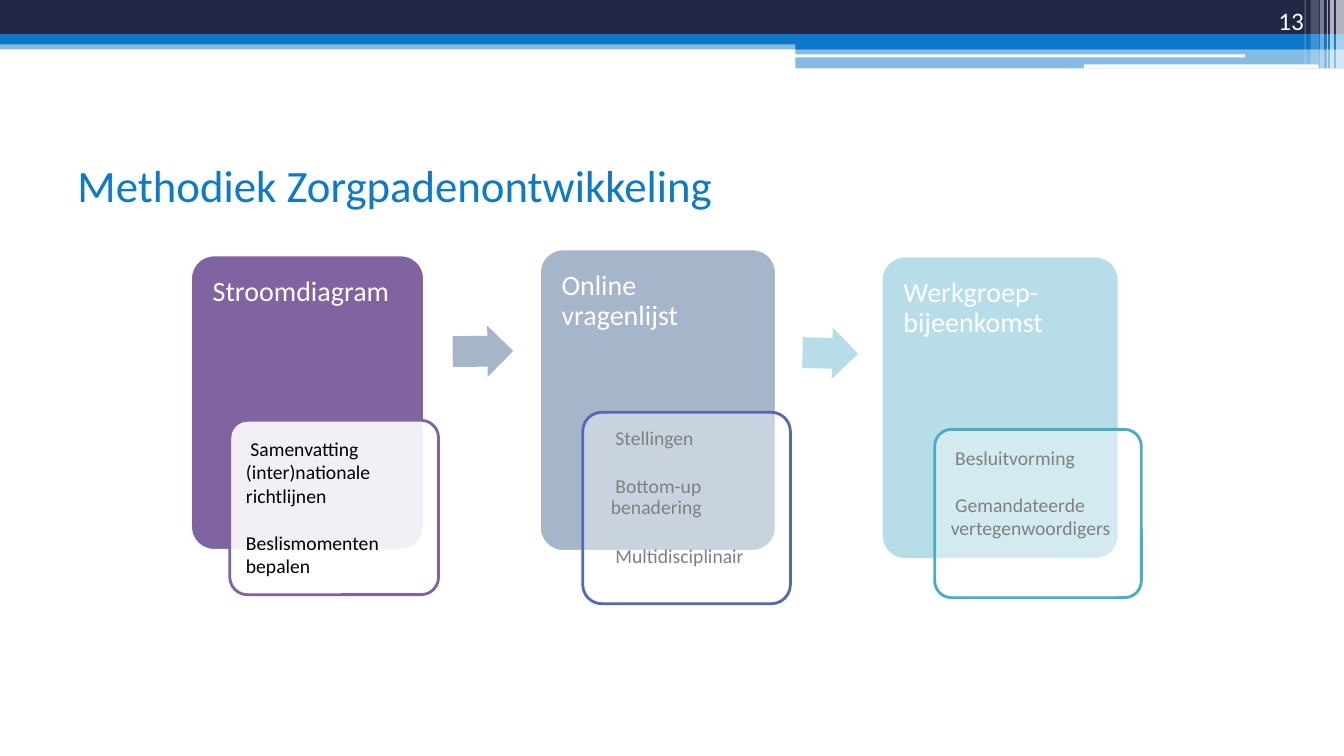
from lxml.etree import SubElement
from pptx import Presentation
from pptx.dml.color import RGBColor
from pptx.enum.shapes import MSO_SHAPE
from pptx.enum.text import MSO_ANCHOR, PP_ALIGN
from pptx.oxml.ns import qn
from pptx.util import Inches, Pt


def rgb(value):
    """Turn a hex string into a colour."""
    return RGBColor.from_string(value)


def assign(obj, values):
    """Set each attribute of an object from a dict."""
    for name, value in values.items():
        setattr(obj, name, value)


class SlideBuilder:
    """Hold the style and the current slide."""

    font = "Calibri"
    white = "FFFFFF"
    blue = "0D78C9"
    navy = "212745"
    grey = "808080"

    def __init__(self, prs):
        """Add a blank slide."""
        self.s = prs.slides.add_slide(prs.slide_layouts[6])

    def shape(self, kind, box, fill, alpha=100, line=None, adj=(), rotation=0):
        """Draw a filled preset shape."""
        sp = self.s.shapes.add_shape(kind, *map(Inches, box))
        sp.shadow.inherit = False
        sp.rotation = rotation
        for i, value in enumerate(adj):
            sp.adjustments[i] = value
        sp.fill.solid()
        sp.fill.fore_color.rgb = rgb(fill)
        if alpha < 100:
            color = sp.fill._xPr.find(qn("a:solidFill"))[0]
            SubElement(color, qn("a:alpha"), val=str(alpha * 1000))
        if line:
            sp.line.color.rgb = rgb(line)
            sp.line.width = Pt(2)
        else:
            sp.line.fill.background()
        return sp

    def text(self, box, paragraphs, size, color, anchor=MSO_ANCHOR.TOP,
             insets=(0.1, 0.05, 0.1, 0.05), indent=(0, 0), **fmt):
        """Place wrapped text with one paragraph per string."""
        tf = self.s.shapes.add_textbox(*map(Inches, box)).text_frame
        sides = ("margin_left", "margin_top", "margin_right", "margin_bottom")
        assign(tf, {"word_wrap": True, "vertical_anchor": anchor,
                    **dict(zip(sides, map(Inches, insets)))})
        for i, line in enumerate(paragraphs):
            p = tf.add_paragraph() if i else tf.paragraphs[0]
            assign(p, fmt)
            pPr = p._p.get_or_add_pPr()
            for name, value in zip(("marL", "indent"), indent):
                pPr.set(name, str(Inches(value)))
            r = p.add_run()
            r.text = line
            assign(r.font, {"name": self.font, "size": Pt(size)})
            r.font.color.rgb = rgb(color)

    def banner(self):
        """Draw the bands and stripes along the top."""
        for box, fill, alpha in (
                ((0, 0.4, 13.33, 0.09), self.blue, 50),
                ((0, 0, 13.33, 0.34), self.navy, 100),
                ((0, 0.34, 13.33, 0.1), self.blue, 100),
                ((7.89, 0.39, 5.44, 0.1), self.blue, 100),
                ((7.89, 0.48, 5.44, 0.2), self.blue, 50)):
            self.shape(MSO_SHAPE.RECTANGLE, box, fill, alpha)
        for box in ((7.88, 0.54, 4.47, 0.03), (10.75, 0.64, 2.33, 0.04)):
            self.shape(MSO_SHAPE.ROUNDED_RECTANGLE, box, self.white)
        for x, width, height, alpha in (
                (13.25, 0.08, 0.68, 65), (13.19, 0.04, 0.68, 65),
                (13.16, 0.01, 0.68, 60), (13.09, 0.04, 0.68, 40),
                (13, 0.08, 0.64, 20), (12.94, 0.01, 0.64, 30)):
            self.shape(MSO_SHAPE.RECTANGLE, (x, 0, width, height), self.white, alpha)

    def card(self, box, label, fill, alpha):
        """Draw a step card with its heading."""
        self.shape(MSO_SHAPE.ROUNDED_RECTANGLE, box, fill, alpha, self.white, (0.1,))
        x, y, w, h = box
        self.text((x + 0.06, y + 0.06, w - 0.12, h * 0.63), [label], 20, self.white,
                  insets=(0.16, 0.16, 0.16, 0.08), line_spacing=0.9)

    def detail(self, box, lines, color, alpha, line, **fmt):
        """Draw the outlined box with the details of a step."""
        self.shape(MSO_SHAPE.ROUNDED_RECTANGLE, box, self.white, alpha, line, (0.1,))
        x, y, w, h = box
        self.text((x + 0.05, y + 0.05, w - 0.1, h - 0.1), lines, 14, color,
                  insets=(0.11,) * 4, **fmt)

    def arrow(self, box, fill, rotation):
        """Draw a block arrow between two steps."""
        self.shape(MSO_SHAPE.RIGHT_ARROW, box, fill, 40, adj=(0.6, 0.5),
                   rotation=rotation)


def main():
    """Build and save the slide."""
    prs = Presentation()
    assign(prs, {"slide_width": Inches(13.33), "slide_height": Inches(7.5)})
    b = SlideBuilder(prs)
    b.banner()
    b.text((0.67, 1.25, 12, 1.17), ["Methodiek Zorgpadenontwikkeling"], 32,
           "0D79CA", MSO_ANCHOR.MIDDLE)
    b.text((11.92, 0, 1.11, 0.4), ["13"], 18, b.white, MSO_ANCHOR.BOTTOM,
           alignment=PP_ALIGN.RIGHT)

    purple, slate, teal = "8064A2", "1F497D", "4BACC6"
    b.card((1.89, 2.53, 2.32, 2.93), "Stroomdiagram", purple, 100)
    b.detail((2.28, 4.17, 2.07, 1.73),
             [" Samenvatting (inter)nationale richtlijnen", "Beslismomenten bepalen"],
             "000000", 90, purple, space_after=Pt(17))
    b.arrow((4.49, 3.23, 0.6, 0.51), slate, 359.4)
    b.card((5.35, 2.47, 2.35, 3), "Online vragenlijst", slate, 40)
    b.detail((5.78, 4.09, 2.06, 1.9),
             [" Stellingen", " Bottom-up benadering", " Multidisciplinair"],
             b.grey, 40, "5767B4", indent=(0.12, 0), line_spacing=0.9,
             space_after=Pt(19.5))
    b.arrow((7.96, 3.25, 0.55, 0.51), teal, 1.3)
    b.card((8.74, 2.54, 2.36, 3.01), "Werkgroep-bijeenkomst", teal, 40)
    b.detail((9.27, 4.26, 2.05, 1.67),
             [" Besluitvorming", " Gemandateerde vertegenwoordigers"],
             b.grey, 40, teal, space_after=Pt(17))
    prs.save("out.pptx")


if __name__ == "__main__":
    main()
